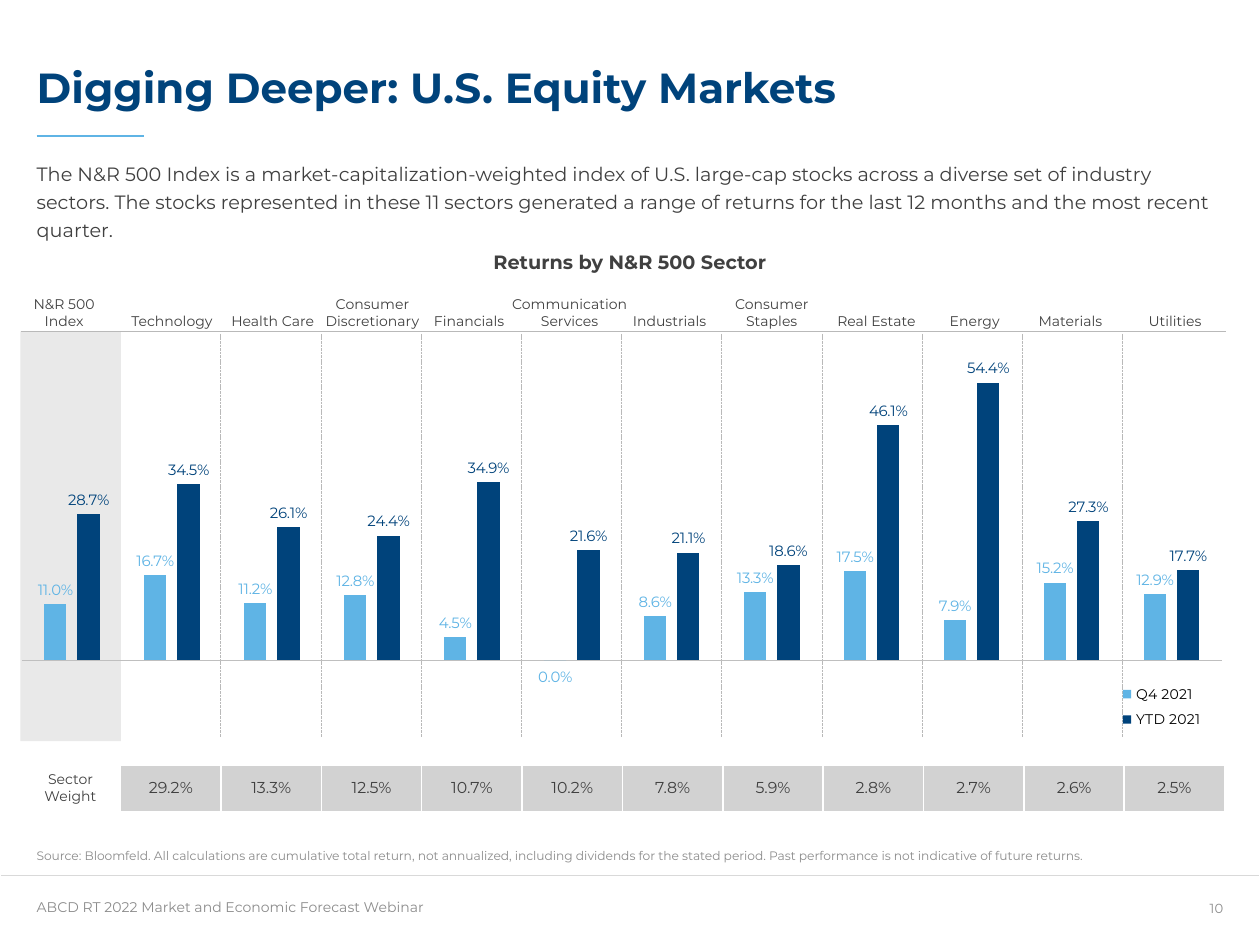
from dataclasses import dataclass

from lxml import etree
from pptx import Presentation
from pptx.chart.data import CategoryChartData
from pptx.dml.color import RGBColor
from pptx.enum.chart import XL_CHART_TYPE, XL_LABEL_POSITION, XL_LEGEND_POSITION
from pptx.enum.chart import XL_TICK_LABEL_POSITION, XL_TICK_MARK
from pptx.enum.dml import MSO_LINE
from pptx.enum.shapes import MSO_CONNECTOR, MSO_SHAPE
from pptx.enum.text import MSO_ANCHOR, PP_ALIGN
from pptx.oxml import parse_xml
from pptx.oxml.ns import nsdecls, qn
from pptx.util import Cm, Pt

LEFT, MID, RIGHT = PP_ALIGN.LEFT, PP_ALIGN.CENTER, PP_ALIGN.RIGHT
TOP, CENTRE, BASE = MSO_ANCHOR.TOP, MSO_ANCHOR.MIDDLE, MSO_ANCHOR.BOTTOM
FONT = "Montserrat"
NAVY, SKY, INK, MUTE, RULE = "00437B", "5FB4E5", "404040", "8C8C8C", "B9B9B9"
EDGE, SPAN = 0.74, 23.93
PERCENT = "0.0%"


@dataclass
class Sector:
    name: str
    left: float
    quarter: float
    year: float
    weight: str
    width: float = 2.06


SECTORS = [
    Sector("N&R 500 Index", 0.43, 0.11, 0.287, "Sector\vWeight", 1.73),
    Sector("Technology", 2.44, 0.167, 0.345, "29.2%"),
    Sector("Health Care", 4.47, 0.112, 0.261, "13.3%"),
    Sector("Consumer Discretionary", 6.48, 0.128, 0.244, "12.5%"),
    Sector("Financials", 8.43, 0.045, 0.349, "10.7%"),
    Sector("Communication Services", 10.29, 0, 0.216, "10.2%", 2.39),
    Sector("Industrials", 12.47, 0.086, 0.211, "7.8%"),
    Sector("Consumer Staples", 14.53, 0.133, 0.186, "5.9%"),
    Sector("Real Estate", 16.64, 0.175, 0.461, "2.8%"),
    Sector("Energy", 18.62, 0.079, 0.544, "2.7%"),
    Sector("Materials", 20.55, 0.152, 0.273, "2.6%"),
    Sector("Utilities", 22.66, 0.129, 0.177, "2.5%"),
]


def tint(code: str) -> RGBColor:
    return RGBColor.from_string(code)


def style(font, size: float, color: str, bold: bool = False) -> None:
    font.name, font.size, font.bold = FONT, Pt(size), bold
    font.color.rgb = tint(color)


def write(slide, text: str, x: float, y: float, w: float, h: float, *,
          size: float = 8, color: str = INK, bold: bool = False,
          align=LEFT, anchor=TOP, space: float = 1.0) -> None:
    frame = slide.shapes.add_textbox(Cm(x), Cm(y), Cm(w), Cm(h)).text_frame
    frame.word_wrap = True
    frame.vertical_anchor = anchor
    frame.margin_left = frame.margin_right = 0
    frame.margin_top = frame.margin_bottom = 0
    para = frame.paragraphs[0]
    para.alignment, para.line_spacing = align, space
    run = para.add_run()
    run.text = text
    style(run.font, size, color, bold)


def rule(slide, x: float, y: float, end: float, low: float, color: str,
         width: float, dash: bool = False) -> None:
    line = slide.shapes.add_connector(
        MSO_CONNECTOR.STRAIGHT, Cm(x), Cm(y), Cm(end), Cm(low))
    line.line.color.rgb = tint(color)
    line.line.width = Pt(width)
    if dash:
        line.line.dash_style = MSO_LINE.SQUARE_DOT
    etree.SubElement(line._element.spPr, qn("a:effectLst"))


def place(x: float, y: float, w: float, h: float, inner: bool = False):
    """Return a chart layout element in fractions of the chart."""
    target = '<c:layoutTarget val="inner"/>' if inner else ""
    return parse_xml(
        f'<c:layout {nsdecls("c")}><c:manualLayout>{target}'
        '<c:xMode val="edge"/><c:yMode val="edge"/>'
        f'<c:x val="{x}"/><c:y val="{y}"/><c:w val="{w}"/><c:h val="{h}"/>'
        '</c:manualLayout></c:layout>')


def lower(label) -> None:
    """Move one data label below the axis."""
    style(label.font, 8.5, SKY)
    label.position = XL_LABEL_POSITION.OUTSIDE_END
    node = label._dLbl
    node.insert(1, parse_xml(
        f'<c:layout {nsdecls("c")}><c:manualLayout>'
        '<c:x val="0"/><c:y val="0.08"/></c:manualLayout></c:layout>'))
    node.insert(2, parse_xml(
        f'<c:numFmt {nsdecls("c")} formatCode="{PERCENT}" sourceLinked="0"/>'))


def draw_chart(slide) -> None:
    data = CategoryChartData(number_format=PERCENT)
    data.categories = [str(i + 1) for i in range(len(SECTORS))]
    data.add_series("Q4 2021", [s.quarter for s in SECTORS])
    data.add_series("YTD 2021", [s.year for s in SECTORS])
    chart = slide.shapes.add_chart(
        XL_CHART_TYPE.COLUMN_CLUSTERED, Cm(0.43), Cm(7.14), Cm(24.21),
        Cm(7.77), data).chart
    chart.has_title = False
    style(chart.font, 9, "000000")

    cats, vals = chart.category_axis, chart.value_axis
    cats.tick_label_position = XL_TICK_LABEL_POSITION.NONE
    cats.major_tick_mark = cats.minor_tick_mark = XL_TICK_MARK.NONE
    cats.format.line.color.rgb = tint("BFBFBF")
    cats.format.line.width = Pt(0.75)
    vals.minimum_scale, vals.maximum_scale = -0.1, 0.6
    vals.has_major_gridlines = vals.visible = False

    plot = chart.plots[0]
    plot.gap_width, plot.overlap, plot.vary_by_categories = 200, -50, False
    for series, color in zip(plot.series, (SKY, NAVY)):
        series.format.fill.solid()
        series.format.fill.fore_color.rgb = tint(color)
        series.invert_if_negative = False
        labels = series.data_labels
        labels.show_value = True
        labels.number_format, labels.number_format_is_linked = PERCENT, False
        labels.position = XL_LABEL_POSITION.OUTSIDE_END
        style(labels.font, 8.5, color)
    for i, sector in enumerate(SECTORS):
        if sector.quarter == 0:
            lower(plot.series[0].points[i].data_label)

    area = chart._chartSpace.chart.plotArea
    for old in area.findall(qn("c:layout")):
        area.remove(old)
    area.insert(0, place(0, 0, 1, 0.927, inner=True))
    chart.has_legend = True
    legend = chart.legend
    legend.position = XL_LEGEND_POSITION.RIGHT
    legend.include_in_layout = True
    style(legend.font, 8, "000000")
    node = legend._element
    for old in node.findall(qn("c:layout")):
        node.remove(old)
    node.find(qn("c:legendPos")).addnext(place(0.91, 0.84, 0.08, 0.15))


def side(cell, name: str) -> None:
    """Give one side of a cell a white border."""
    cell._tc.get_or_add_tcPr().append(parse_xml(
        f'<a:{name} {nsdecls("a")} w="12700"><a:solidFill>'
        f'<a:srgbClr val="FFFFFF"/></a:solidFill></a:{name}>'))


def draw_table(slide) -> None:
    count = len(SECTORS)
    frame = slide.shapes.add_table(
        2, count, Cm(0.41), Cm(15.01), Cm(24.28), Cm(1.35))
    table = frame.table
    table.first_row = table.horz_banding = False
    table.rows[0].height, table.rows[1].height = Cm(0.41), Cm(0.94)
    for i, sector in enumerate(SECTORS):
        table.columns[i].width = Cm(24.28 / count)
        blank, cell = table.cell(0, i), table.cell(1, i)
        blank.margin_top = blank.margin_bottom = 0
        blank.fill.background()
        para = blank.text_frame.paragraphs[0]._p
        etree.SubElement(para, qn("a:endParaRPr"), sz="800")

        cell.vertical_anchor = CENTRE
        cell.margin_top = cell.margin_bottom = 0
        cell.margin_left = cell.margin_right = Cm(0.1)
        side(cell, "lnL")
        side(cell, "lnR")
        cell.fill.solid()
        cell.fill.fore_color.rgb = tint("D2D2D2" if i else "FFFFFF")
        cell.text = sector.weight
        para = cell.text_frame.paragraphs[0]
        para.alignment = MID
        for run in para.runs:
            style(run.font, 9 if i else 8, INK)
    table.cell(0, 0).merge(table.cell(0, count - 1))


def main() -> None:
    deck = Presentation()
    deck.slide_width, deck.slide_height = Cm(25.4), Cm(19.05)
    slide = deck.slides.add_slide(deck.slide_layouts[6])

    rule(slide, 0.03, 17.65, 25.37, 17.65, "D9D9D9", 1)
    write(slide, "10", 24, 18.03, 0.66, 0.56, size=7.5, color=MUTE,
          align=RIGHT, anchor=CENTRE)
    rule(slide, EDGE, 2.74, 2.9, 2.74, SKY, 1)
    write(slide, "ABCD RT 2022 Market and Economic Forecast Webinar",
          EDGE, 18.11, 19.23, 0.41, color=MUTE)
    write(slide, "Source: Bloomfeld. All calculations are cumulative total "
          "return, not annualized, including dividends for the stated period. "
          "Past performance is not indicative of future returns.",
          EDGE, 16.94, SPAN, 0.46, size=7, color=MUTE, anchor=BASE, space=0.9)
    write(slide, "The N&R 500 Index is a market-capitalization-weighted index "
          "of U.S. large-cap stocks across a diverse set of industry sectors. "
          "The stocks represented in these 11 sectors generated a range of "
          "returns for the last 12 months and the most recent quarter.",
          EDGE, 3.18, SPAN, 1.65, size=11, space=1.2)
    write(slide, "Digging Deeper: U.S. Equity Markets", EDGE, 0.28, SPAN, 1.98,
          size=24, color=NAVY, bold=True, anchor=BASE, space=0.8)

    draw_table(slide)
    band = slide.shapes.add_shape(
        MSO_SHAPE.RECTANGLE, Cm(0.41), Cm(6.68), Cm(2.03), Cm(8.26))
    band.shadow.inherit = False
    band.fill.solid()
    band.fill.fore_color.rgb = tint("E9E9E9")
    band.line.fill.background()

    for sector in SECTORS:
        write(slide, sector.name, sector.left, 5.89, sector.width, 0.74,
              align=MID, anchor=BASE)
    for i in range(len(SECTORS) - 2):
        x = 4.45 + 2.02 * i
        rule(slide, x, 6.73, x, 14.86, RULE, 0.5, dash=True)
    rule(slide, 0.43, 6.68, 24.71, 6.68, RULE, 0.5)
    write(slide, "Returns by N&R 500 Sector", 0, 5.05, 25.4, 0.48, size=11,
          bold=True, align=MID)
    draw_chart(slide)
    deck.save("out.pptx")


if __name__ == "__main__":
    main()
